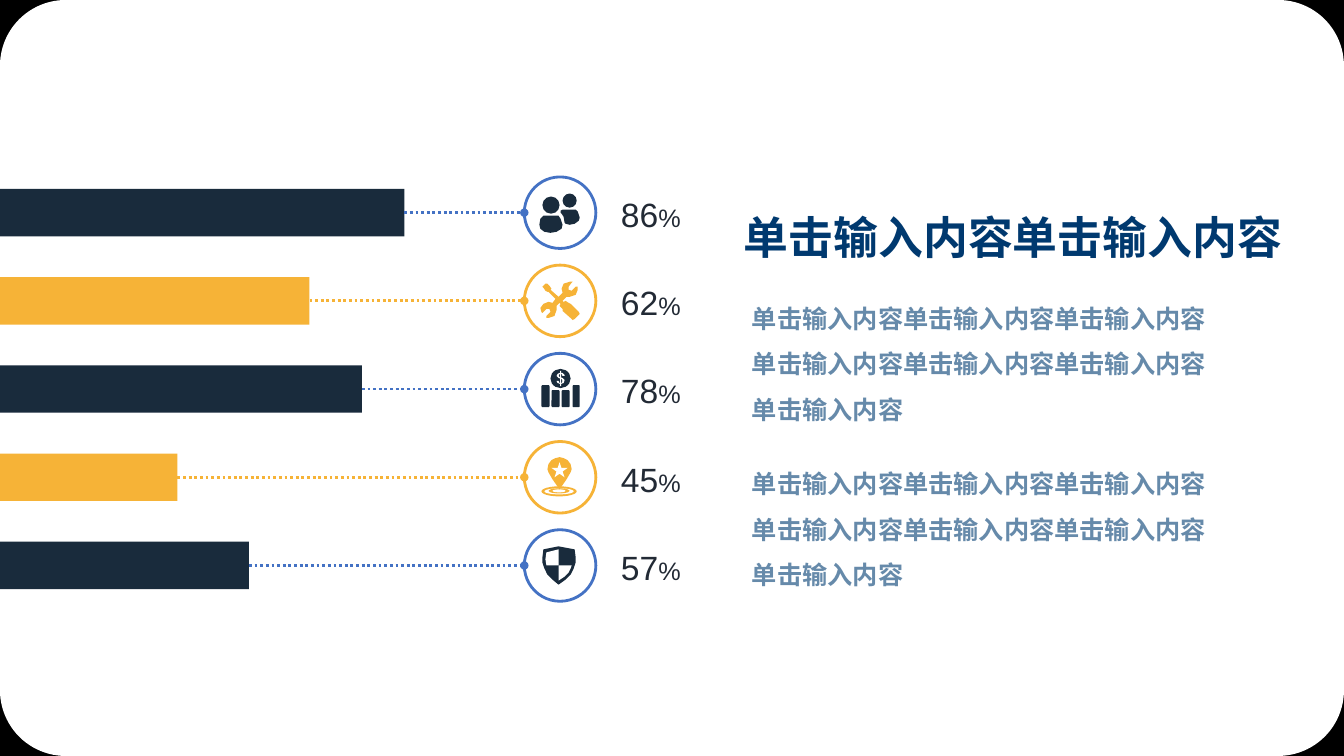
from dataclasses import dataclass

from lxml.etree import SubElement
from pptx import Presentation
from pptx.dml.color import RGBColor
from pptx.enum.dml import MSO_LINE
from pptx.enum.shapes import MSO_CONNECTOR, MSO_SHAPE as Preset
from pptx.enum.text import MSO_AUTO_SIZE as AutoSize
from pptx.oxml.ns import qn
from pptx.util import Inches, Pt

NAVY, GOLD, BLUE, WHITE = "192B3C", "F6B337", "4472C4", "FFFFFF"
CJK = "Noto Sans CJK SC"
PHRASE = "单击输入内容"

FIRST_CENTRE, ROW_PITCH = 2.11, 0.875
BAR_HEIGHT = 0.47
RING_LEFT, RING_SIZE = 5.2, 0.71
ICON_CENTRE = 5.55


# Icon parts, in hundredths of an inch from the icon centre
@dataclass
class Block:
    preset: Preset
    left: float
    top: float
    width: float
    height: float
    hollow: bool = False


@dataclass
class Outline:
    points: list[tuple[float, float]]
    hollow: bool = False


@dataclass
class Row:
    percent: str
    bar_width: float
    fill: str
    accent: str
    icon: list[Block | Outline]


PEOPLE = [
    Block(Preset.OVAL, -17, -16, 17, 17),
    Block(Preset.OVAL, 3, -19, 14, 14),
    Outline([(-16, 3), (-1, 3), (1, 6), (3, 12), (2, 16), (-3, 19), (-9, 20),
             (-15, 19), (-19, 16), (-20, 12), (-19, 6)]),
    Outline([(3, -3), (16, -3), (18, -1), (20, 5), (19, 8), (15, 11), (10, 12),
             (6, 11), (5, 10), (4, 4), (2, 1), (1, 0), (1, -2)]),
]
TOOLS = [
    Outline([(19, 11), (11, 3), (9, 2), (6, 0), (4, 1), (3, 0), (7, -4), (10, -4),
             (16, -6), (18, -11), (18, -14), (16, -14), (12, -10), (9, -11),
             (9, -14), (12, -18), (13, -19), (10, -19), (4, -17), (2, -12),
             (3, -8), (-1, -4), (-9, -11), (-8, -12), (-10, -15), (-12, -17),
             (-14, -17), (-17, -14), (-16, -13), (-14, -10), (-12, -9), (-11, -9),
             (-4, -2), (-7, 2), (-11, 1), (-16, 3), (-19, 7), (-18, 11), (-17, 12),
             (-13, 8), (-10, 8), (-9, 11), (-13, 15), (-13, 17), (-11, 17),
             (-5, 15), (-3, 9), (-3, 5), (0, 2), (1, 3), (0, 5), (3, 8), (3, 10),
             (12, 18), (13, 19), (15, 18), (19, 14), (20, 13)]),
]
SAVINGS = [
    Block(Preset.ROUNDED_RECTANGLE, -18, -4, 8, 22),
    Block(Preset.ROUNDED_RECTANGLE, -8, 1, 8, 17),
    Block(Preset.ROUNDED_RECTANGLE, 2, 1, 8, 17),
    Block(Preset.ROUNDED_RECTANGLE, 13, -4, 7, 22),
    Block(Preset.OVAL, -9, -20, 20, 19),
    Outline([(5, -13), (3, -13), (2, -15), (0, -15), (-1, -13), (0, -12), (3, -11),
             (5, -9), (4, -6), (1, -5), (-2, -6), (-3, -8), (-1, -8), (0, -6),
             (2, -6), (3, -8), (2, -10), (-1, -11), (-3, -13), (-2, -15),
             (0, -16), (3, -16), (5, -14)], hollow=True),
    Block(Preset.RECTANGLE, 0.5, -18, 1, 15, hollow=True),
]
PIN = [
    Block(Preset.OVAL, -18, 9, 35, 10),
    Block(Preset.OVAL, -15, 11, 29, 6, hollow=True),
    Block(Preset.OVAL, -11, 11, 21, 5),
    Block(Preset.OVAL, -7, 12, 13, 3, hollow=True),
    Outline([(0, 12), (-7, 2), (-11, -5), (-12, -8), (-11, -13), (-8, -17),
             (-4, -19), (0, -20), (4, -19), (8, -17), (11, -13), (12, -8),
             (11, -5), (7, 2)]),
    Block(Preset.STAR_5_POINT, -8, -15, 16, 15, hollow=True),
]
SHIELD = [
    Outline([(-16, -16), (-1, -19), (15, -16), (16, -8), (16, -3), (14, 3), (11, 9),
             (6, 14), (-1, 19), (-7, 14), (-12, 9), (-15, 3), (-17, -3), (-17, -8)]),
    Outline([(-13, -13), (-1, -16), (-1, 0), (-13, 0), (-14, -6)], hollow=True),
    Outline([(-1, 0), (12, 0), (11, 3), (9, 7), (5, 11), (-1, 15)], hollow=True),
]
ROWS = [
    Row("86", 4.01, NAVY, BLUE, PEOPLE),
    Row("62", 3.07, GOLD, GOLD, TOOLS),
    Row("78", 3.59, NAVY, BLUE, SAVINGS),
    Row("45", 1.76, GOLD, GOLD, PIN),
    Row("57", 2.47, NAVY, BLUE, SHIELD),
]


def rgb(color: str) -> RGBColor:
    return RGBColor.from_string(color)


def paint(shape, color: str):
    shape.shadow.inherit = False
    shape.fill.solid()
    shape.fill.fore_color.rgb = rgb(color)
    shape.line.fill.background()
    return shape


def add_block(page, preset: Preset, left: float, top: float, width: float,
              height: float, color: str):
    shape = page.shapes.add_shape(preset, Inches(left), Inches(top),
                                  Inches(width), Inches(height))
    return paint(shape, color)


def add_icon(page, parts: list[Block | Outline], centre: float, color: str) -> None:
    for part in parts:
        tint = WHITE if part.hollow else color
        if isinstance(part, Block):
            add_block(page, part.preset, ICON_CENTRE + part.left / 100,
                      centre + part.top / 100, part.width / 100,
                      part.height / 100, tint)
        else:
            builder = page.shapes.build_freeform(*part.points[0], scale=Inches(0.01))
            builder.add_line_segments(part.points[1:])
            paint(builder.convert_to_shape(Inches(ICON_CENTRE), Inches(centre)), tint)


def add_ring(page, centre: float, color: str) -> None:
    ring = add_block(page, Preset.OVAL, RING_LEFT, centre - RING_SIZE / 2,
                     RING_SIZE, RING_SIZE, WHITE)
    ring.fill.background()
    ring.line.color.rgb = rgb(color)
    ring.line.width = Pt(2)


def add_leader(page, start: float, centre: float, color: str) -> None:
    leader = page.shapes.add_connector(MSO_CONNECTOR.STRAIGHT, Inches(start),
                                       Inches(centre), Inches(RING_LEFT), Inches(centre))
    leader.line.color.rgb = rgb(color)
    leader.line.width = Pt(2)
    leader.line.dash_style = MSO_LINE.ROUND_DOT
    properties = leader._element.spPr
    SubElement(properties.find(qn("a:ln")), qn("a:tailEnd"), type="oval")
    SubElement(properties, qn("a:effectLst"))


def add_text(page, left: float, top: float, width: float, height: float,
             spans: list[tuple[str, int]], font: str, color: str,
             bold: bool = False, spacing: float = 1.0) -> None:
    box = page.shapes.add_textbox(Inches(left), Inches(top), Inches(width), Inches(height))
    box.text_frame.word_wrap = True
    box.text_frame.auto_size = AutoSize.SHAPE_TO_FIT_TEXT
    para = box.text_frame.paragraphs[0]
    para.line_spacing = spacing
    for text, size in spans:
        span = para.add_run()
        span.text = text
        span.font.size, span.font.bold, span.font.name = Pt(size), bold, font
        span.font.color.rgb = rgb(color)
        SubElement(span.font._element, qn("a:ea"), typeface=font)


def main() -> None:
    deck = Presentation()
    deck.slide_width, deck.slide_height = Inches(13.33), Inches(7.5)
    page = deck.slides.add_slide(deck.slide_layouts[6])

    # Black backdrop with a rounded white card
    page.background.fill.solid()
    page.background.fill.fore_color.rgb = rgb("000000")
    card = add_block(page, Preset.ROUNDED_RECTANGLE, 0, 0, 13.33, 7.5, WHITE)
    card.adjustments[0] = 0.087

    # Bars with leaders, icons and percentages
    for index, row in enumerate(ROWS):
        centre = FIRST_CENTRE + index * ROW_PITCH
        bar_top = centre - BAR_HEIGHT / 2
        add_text(page, 6.06, bar_top, 1.31, 0.5, [(row.percent, 24), ("%", 18)],
                 "Arial", "222A35")
        add_block(page, Preset.RECTANGLE, 0, bar_top, row.bar_width, BAR_HEIGHT, row.fill)
        add_ring(page, centre, row.accent)
        add_leader(page, row.bar_width, centre, row.accent)
        add_icon(page, row.icon, centre, row.fill)

    # Heading and the two text blocks
    add_text(page, 7.28, 1.76, 5.91, 0.81, [(PHRASE * 2, 32)], CJK, "00396F", True, 1.5)
    for top in (2.81, 4.45):
        add_text(page, 7.36, top, 4.72, 1.39, [(PHRASE * 7, 18)], CJK, "668AAA", True, 1.5)

    deck.save("out.pptx")


if __name__ == "__main__":
    main()
